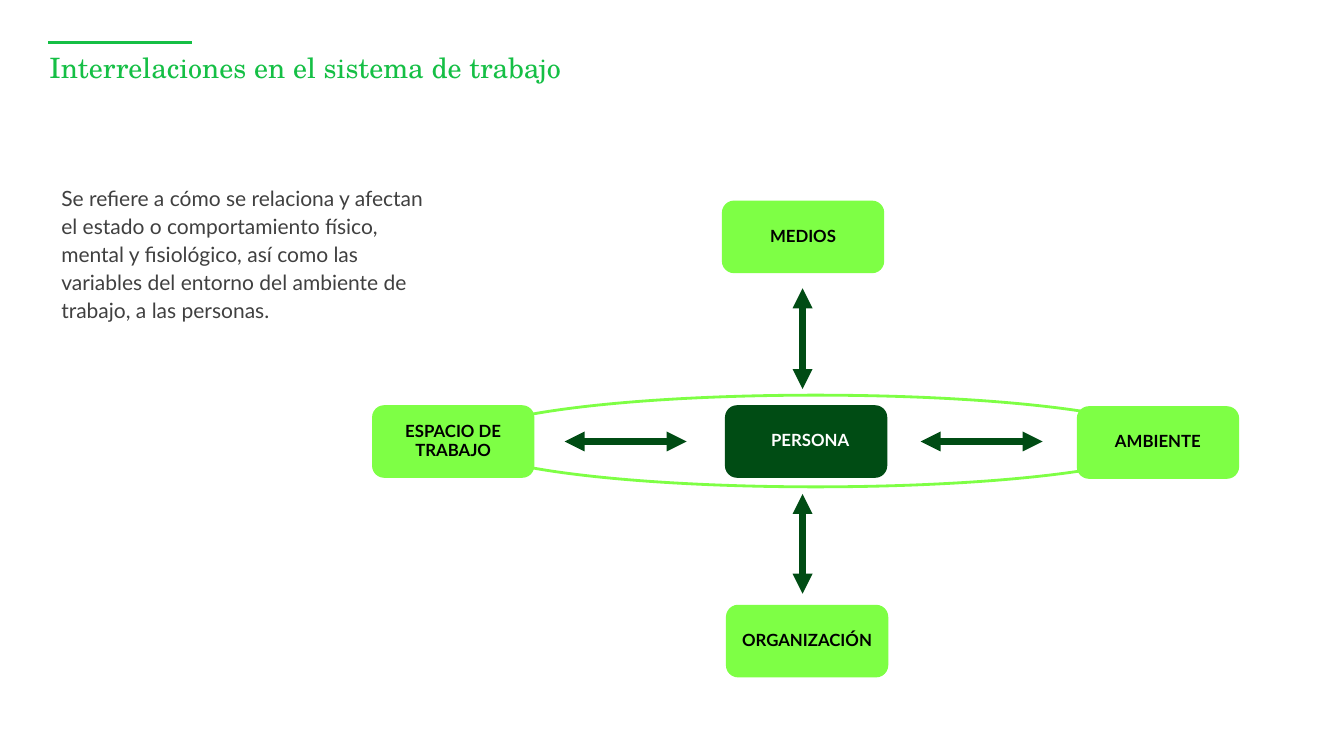
from dataclasses import dataclass

from lxml import etree
from pptx import Presentation
from pptx.dml.color import RGBColor
from pptx.enum.shapes import MSO_CONNECTOR, MSO_SHAPE
from pptx.enum.text import MSO_ANCHOR, MSO_AUTO_SIZE, PP_ALIGN
from pptx.oxml.ns import qn
from pptx.util import Inches, Pt

STRAIGHT = MSO_CONNECTOR.STRAIGHT
ROUNDED, OVAL = MSO_SHAPE.ROUNDED_RECTANGLE, MSO_SHAPE.OVAL
TOP, MIDDLE = MSO_ANCHOR.TOP, MSO_ANCHOR.MIDDLE
LEFT, CENTER = PP_ALIGN.LEFT, PP_ALIGN.CENTER
GREEN, LIME, DARK_GREEN = "15BF45", "7EFF45", "004C14"
BODY_FONT, TITLE_FONT = "Lato", "TeX Gyre Schola"
BOX_WIDTH, BOX_HEIGHT = 1.61, 0.72
ARROW_Y, ARROW_X = 4.38, 7.96


@dataclass
class Box:
    label: str
    left: float
    top: float
    fill: str = LIME
    color: str = "000000"
    left_inset: float = 0.1


@dataclass
class Line:
    start: tuple[float, float]
    end: tuple[float, float]


BOXES = [
    Box("ESPACIO DE TRABAJO", 3.69, 4.02),
    Box("MEDIOS", 7.16, 1.99),
    Box("AMBIENTE", 10.68, 4.03),
    Box("PERSONA", 7.19, 4.02, DARK_GREEN, "FFFFFF", 0.18),
    Box("ORGANIZACIÓN", 7.2, 6),
]
ARROWS = [
    Line((5.6, ARROW_Y), (6.81, ARROW_Y)),
    Line((9.13, ARROW_Y), (10.34, ARROW_Y)),
    Line((ARROW_X, 3.86), (ARROW_X, 2.86)),
    Line((ARROW_X, 5.89), (ARROW_X, 4.9)),
]


def rgb(color: str) -> RGBColor:
    return RGBColor.from_string(color)


def add_run(paragraph, text: str, font: str, size: float, color: str, bold: bool = False) -> None:
    run = paragraph.add_run()
    run.text = text
    run.font.name = font
    run.font.size = Pt(size)
    run.font.bold = bold
    run.font.color.rgb = rgb(color)


def add_line(slide, line: Line, color: str, width: float, arrowheads: bool = False) -> None:
    points = [Inches(value) for value in (*line.start, *line.end)]
    connector = slide.shapes.add_connector(STRAIGHT, *points)
    connector.line.color.rgb = rgb(color)
    connector.line.width = Pt(width)
    if arrowheads:
        outline = connector.line._get_or_add_ln()
        for end in ("a:headEnd", "a:tailEnd"):
            etree.SubElement(outline, qn(end), type="triangle")
    etree.SubElement(connector._element.spPr, qn("a:effectLst"))


def add_title(slide) -> None:
    title = slide.shapes.title
    title.left, title.top = Inches(0.49), Inches(0.54)
    title.width, title.height = Inches(10.79), Inches(0.57)
    frame = title.text_frame
    frame.margin_left = frame.margin_right = frame.margin_top = frame.margin_bottom = 0
    frame.vertical_anchor = TOP
    frame.auto_size = MSO_AUTO_SIZE.NONE
    paragraph = frame.paragraphs[0]
    paragraph.alignment = LEFT
    paragraph.line_spacing = 0.9
    paragraph.space_before = Pt(0)
    add_run(paragraph, "Interrelaciones en el sistema de trabajo", TITLE_FONT, 20, GREEN)


def add_description(slide) -> None:
    text_box = slide.shapes.add_textbox(Inches(0.51), Inches(1.76), Inches(3.86), Inches(1.48))
    text_box.text_frame.word_wrap = True
    paragraph = text_box.text_frame.paragraphs[0]
    paragraph.line_spacing = Pt(20)
    add_run(
        paragraph,
        "Se refiere a cómo se relaciona y afectan el estado o comportamiento físico, "
        "mental y fisiológico, así como las variables del entorno del ambiente de "
        "trabajo, a las personas.",
        BODY_FONT, 15, "404040",
    )


def add_orbit(slide) -> None:
    """Draw the ellipse that runs behind the middle row of boxes."""
    orbit = slide.shapes.add_shape(OVAL, Inches(4.62), Inches(3.92), Inches(6.94), Inches(0.91))
    orbit.shadow.inherit = False
    orbit.fill.background()
    orbit.line.color.rgb = rgb(LIME)
    orbit.line.width = Pt(2)


def add_box(slide, box: Box) -> None:
    shape = slide.shapes.add_shape(
        ROUNDED, Inches(box.left), Inches(box.top), Inches(BOX_WIDTH), Inches(BOX_HEIGHT)
    )
    shape.shadow.inherit = False
    shape.fill.solid()
    shape.fill.fore_color.rgb = rgb(box.fill)
    shape.line.fill.background()
    frame = shape.text_frame
    frame.word_wrap = True
    frame.vertical_anchor = MIDDLE
    frame.margin_left = Inches(box.left_inset)
    paragraph = frame.paragraphs[0]
    paragraph.alignment = CENTER
    paragraph.line_spacing = 0.9
    add_run(paragraph, box.label, BODY_FONT, 12, box.color, bold=True)


def main() -> None:
    presentation = Presentation()
    presentation.slide_width, presentation.slide_height = Inches(13.33), Inches(7.5)
    slide = presentation.slides.add_slide(presentation.slide_layouts[5])
    add_line(slide, Line((0.48, 0.42), (1.9, 0.42)), GREEN, 1.75)
    add_title(slide)
    add_description(slide)
    add_orbit(slide)
    for box in BOXES:
        add_box(slide, box)
    for arrow in ARROWS:
        add_line(slide, arrow, DARK_GREEN, 4.75, arrowheads=True)
    presentation.save("out.pptx")


if __name__ == "__main__":
    main()
